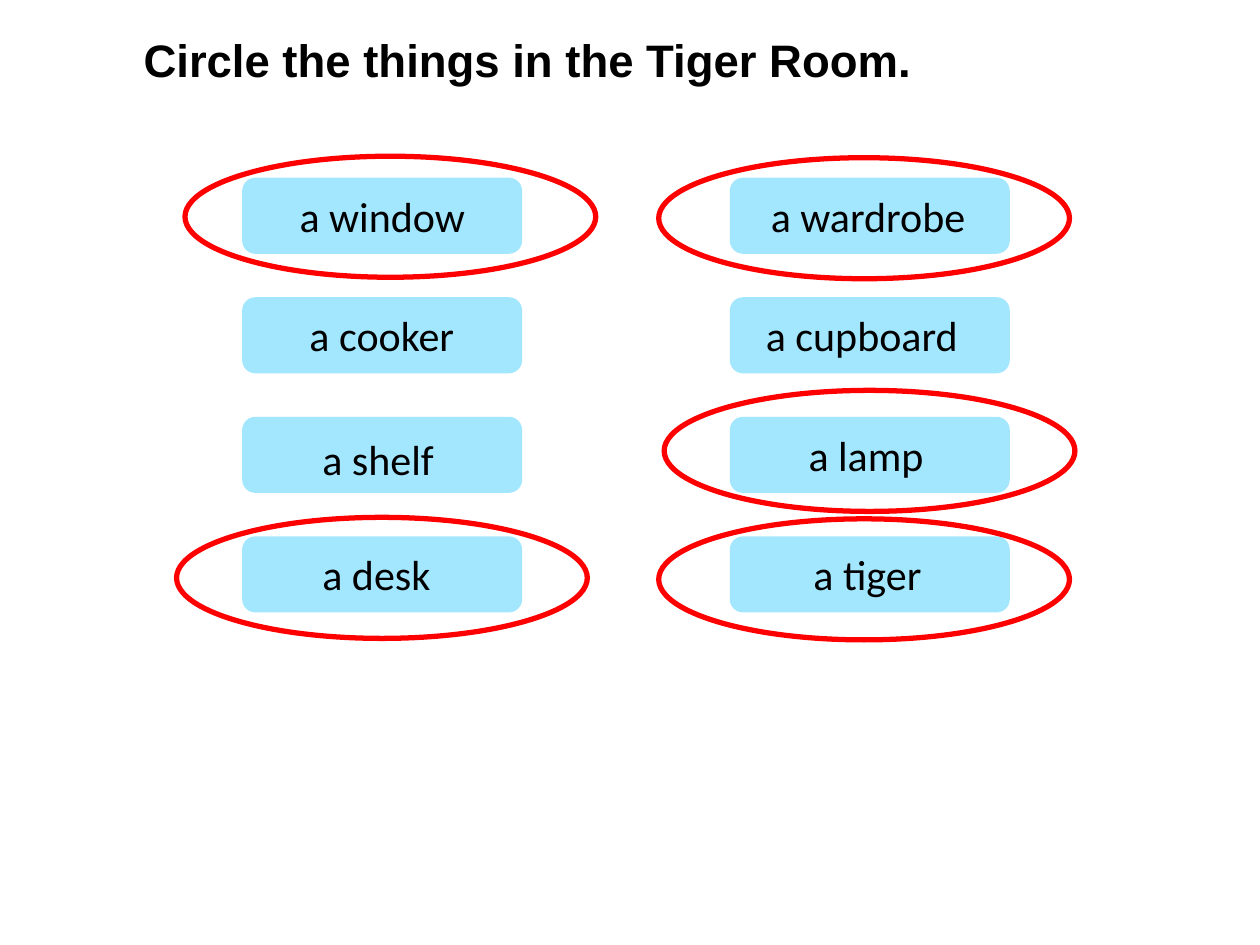
from dataclasses import dataclass
from pptx import Presentation
from pptx.dml.color import RGBColor
from pptx.enum.shapes import MSO_SHAPE
from pptx.enum.text import MSO_ANCHOR, MSO_AUTO_SIZE, PP_ALIGN
from pptx.util import Cm, Pt


@dataclass(frozen=True)
class Theme:
    ink: RGBColor = RGBColor(0, 0, 0)
    card: RGBColor = RGBColor(0xA3, 0xE7, 0xFF)
    ring: RGBColor = RGBColor(0xFF, 0, 0)
    head: tuple = ("Arial", 26, True)
    word: tuple = ("Calibri", 24, False)
    thin: float = 1
    thick: float = 3


def apply(item, form):
    for key, value in form.items():
        setattr(item, key, value)


class Sheet:
    """Draw styled elements on the current slide."""

    def __init__(self, deck, theme):
        self.theme = theme
        self.slide = deck.slides.add_slide(deck.slide_layouts[5])

    def label(self, shape, text, style):
        frame = shape.text_frame
        frame.text = text
        apply(frame, {
            "word_wrap": True,
            "auto_size": MSO_AUTO_SIZE.SHAPE_TO_FIT_TEXT,
            "vertical_anchor": MSO_ANCHOR.TOP,
        })
        line = frame.paragraphs[0]
        line.alignment = PP_ALIGN.LEFT
        name, size, bold = style
        apply(line.font, {"name": name, "size": Pt(size), "bold": bold})
        line.font.color.rgb = self.theme.ink

    def title(self, text, *box):
        shape = self.slide.shapes.title
        sides = ("left", "top", "width", "height")
        apply(shape, dict(zip(sides, map(Cm, box))))
        self.label(shape, text, self.theme.head)

    def shape(self, home, kind, box, tint, width):
        item = home.add_shape(kind, *map(Cm, box))
        item.shadow.inherit = False
        item.line.color.rgb = tint
        item.line.width = Pt(width)
        return item

    def card(self, text, box, area):
        home = self.slide.shapes.add_group_shape().shapes
        tint = self.theme.card
        back = self.shape(home, MSO_SHAPE.ROUNDED_RECTANGLE, box, tint, self.theme.thin)
        back.fill.solid()
        back.fill.fore_color.rgb = tint
        self.label(home.add_textbox(*map(Cm, area)), text, self.theme.word)

    def ring(self, *box):
        item = self.shape(self.slide.shapes, MSO_SHAPE.OVAL, box, self.theme.ring, self.theme.thick)
        item.fill.background()


COLUMNS = {
    4.9: [
        ("a window", 5.79, 3.89, 0.11),
        ("a cooker", 5.99, 3.45, 0.11),
        ("a shelf", 6.25, 2.9, 0.2),
        ("a desk", 6.25, 2.9, 0.11),
    ],
    14.73: [
        ("a wardrobe", 15.29, 4.52, 0.11),
        ("a cupboard", 15.19, 4.67, 0.11),
        ("a lamp", 16.05, 2.95, 0.11),
        ("a tiger", 16.15, 2.77, 0.11),
    ],
}
RINGS = [(13.39, 7.87), (3.56, 10.43), (13.28, 10.46), (3.73, 3.15), (13.28, 3.18)]


def main():
    deck = Presentation()
    apply(deck, {"slide_width": Cm(25.4), "slide_height": Cm(19.05)})
    sheet = Sheet(deck, Theme())
    sheet.title("Circle the things in the Tiger Room.", 2.64, 0.51, 21.28, 1.37)
    for left, words in COLUMNS.items():
        for row, (text, start, width, drop) in enumerate(words):
            top = 3.6 + row * 2.41
            sheet.card(text, (left, top, 5.61, 1.5), (start, top + drop, width, 1.27))
    for left, top in RINGS:
        sheet.ring(left, top, 8.28, 2.44)
    deck.save("out.pptx")


if __name__ == "__main__":
    main()
